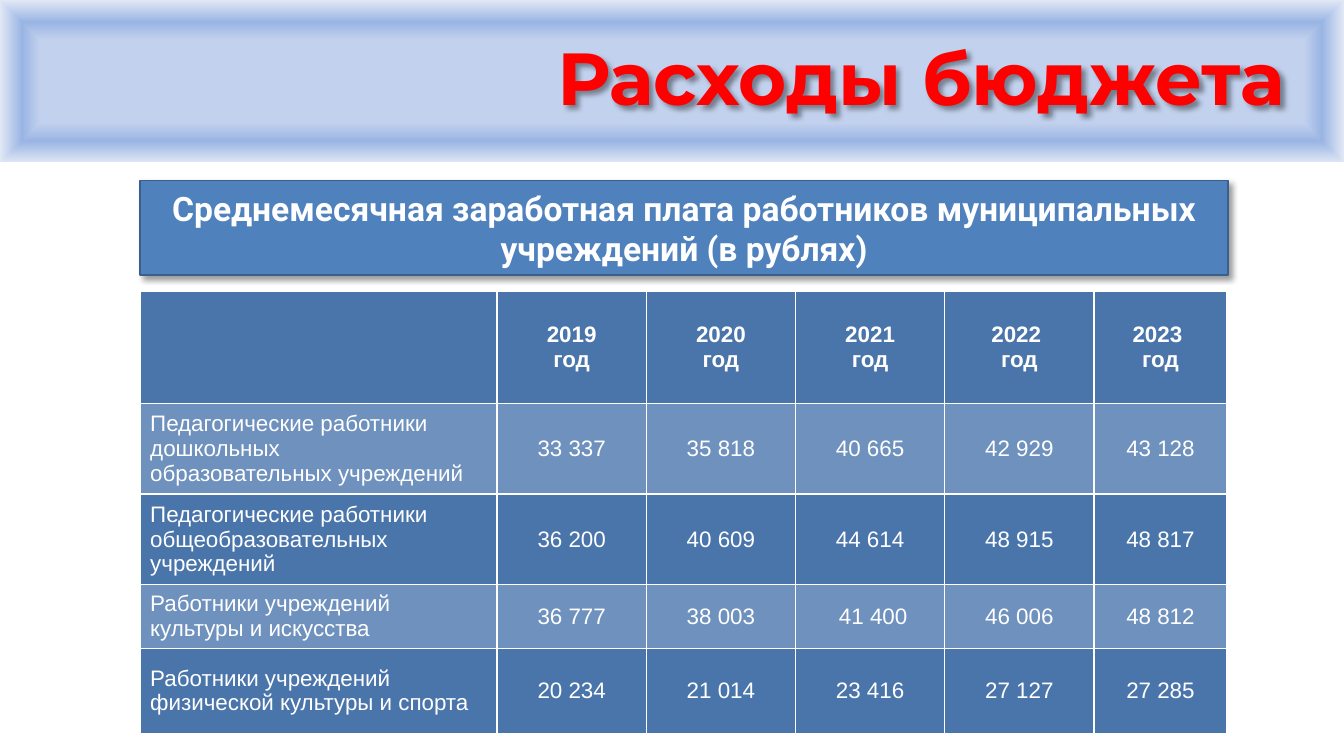
from pptx import Presentation
from pptx.dml.color import RGBColor
from pptx.enum.shapes import MSO_CONNECTOR, MSO_SHAPE
from pptx.enum.text import MSO_ANCHOR, PP_ALIGN
from pptx.oxml import parse_xml
from pptx.oxml.ns import nsdecls
from pptx.util import Inches, Pt

WHITE = RGBColor(0xFF, 0xFF, 0xFF)
RED = RGBColor(0xFF, 0x00, 0x00)
BANNER_BLUE = RGBColor(0x4F, 0x81, 0xBD)
BANNER_EDGE = RGBColor(0x3A, 0x5F, 0x8C)
ROW_DARK = RGBColor(0x4A, 0x75, 0xAB)
ROW_LIGHT = RGBColor(0x6E, 0x91, 0xBD)
HEADER_CENTRE = RGBColor(0xC2, 0xD1, 0xED)
HEADER_MIDDLE = RGBColor(0x9A, 0xB5, 0xE4)
HEADER_EDGE = RGBColor(0xE1, 0xE8, 0xF5)

SLIDE_W, SLIDE_H = 13.33, 7.5
COLUMN_WIDTHS = [3.54, 1.48, 1.48, 1.48, 1.48, 1.32]
ROW_HEIGHTS = [1.11, 0.84, 0.84, 0.59, 0.84]
HEADINGS = [[], ["2019", "год"], ["2020", "год"], ["2021", "год"],
            ["2022 ", "год"], ["2023 ", "год"]]
SALARIES = [
    (["Педагогические работники дошкольных", "образовательных учреждений"],
     ["33 337", "35 818", "40 665", "42 929", "43 128"]),
    (["Педагогические работники общеобразовательных", "учреждений"],
     ["36 200", "40 609", "44 614", "48 915", "48 817"]),
    (["Работники учреждений культуры и искусства"],
     ["36 777", "38 003", " 41 400", "46 006", "48 812"]),
    (["Работники учреждений физической культуры и спорта"],
     ["20 234", "21 014", "23 416", "27 127", "27 285"]),
]


def add_xml(parent, xml):
    tag, rest = xml.split(" ", 1) if " " in xml.split(">")[0] else (xml[:-2], "/>")
    parent.append(parse_xml(f"{tag} {nsdecls('a')} {rest}"))


def add_shadow(sp):
    add_xml(sp._element.spPr,
            '<a:effectLst ><a:outerShdw blurRad="50800" dist="38100" dir="2700000" '
            'algn="tl" rotWithShape="0"><a:srgbClr val="000000"><a:alpha val="40000"/>'
            '</a:srgbClr></a:outerShdw></a:effectLst>')


def write(tf, lines, font, size, color, bold, align):
    for i, line in enumerate(lines):
        p = tf.paragraphs[0] if i == 0 else tf.add_paragraph()
        p.alignment = align
        r = p.add_run()
        r.text = line
        r.font.name = font
        r.font.size = Pt(size)
        r.font.bold = bold
        r.font.color.rgb = color


def add_header(s, x, y, w, h):
    sp = s.shapes.add_shape(MSO_SHAPE.RECTANGLE, Inches(x), Inches(y), Inches(w), Inches(h))
    sp.line.fill.background()
    stops = [(50, HEADER_CENTRE), (73, HEADER_MIDDLE), (100, HEADER_EDGE)]
    stop_xml = "".join(f'<a:gs pos="{pos * 1000}"><a:srgbClr val="{color}"/></a:gs>'
                       for pos, color in stops)
    gradient = parse_xml(
        f'<a:gradFill {nsdecls("a")} rotWithShape="1"><a:gsLst>{stop_xml}</a:gsLst>'
        '<a:path path="shape"><a:fillToRect l="50000" t="50000" r="50000" b="50000"/>'
        '</a:path></a:gradFill>')
    sp._element.spPr.prstGeom.addnext(gradient)
    sp.shadow.inherit = False

    rule = s.shapes.add_connector(MSO_CONNECTOR.STRAIGHT, Inches(x), Inches(y + h),
                                  Inches(x + w), Inches(y + h))
    rule.line.color.rgb = WHITE
    rule.line.width = Pt(2)
    add_xml(rule._element.spPr, "<a:effectLst/>")

    title = s.shapes.add_textbox(Inches(x + 2.65), Inches(y + 0.16), Inches(10.19), Inches(1.09))
    tf = title.text_frame
    tf.word_wrap = True
    tf.vertical_anchor = MSO_ANCHOR.BOTTOM
    write(tf, ["Расходы бюджета"], "Montserrat", 52.6, RED, True, PP_ALIGN.RIGHT)
    tf.paragraphs[0].line_spacing = 0.9
    add_shadow(title)


def add_banner(s, x, y, w, h):
    sp = s.shapes.add_shape(MSO_SHAPE.RECTANGLE, Inches(x), Inches(y), Inches(w), Inches(h))
    sp.fill.solid()
    sp.fill.fore_color.rgb = BANNER_BLUE
    sp.line.color.rgb = BANNER_EDGE
    sp.line.width = Pt(1)
    add_shadow(sp)
    tf = sp.text_frame
    tf.word_wrap = True
    tf.vertical_anchor = MSO_ANCHOR.MIDDLE
    write(tf, ["Среднемесячная заработная плата работников муниципальных учреждений (в рублях)"],
          "Roboto", 24, WHITE, True, PP_ALIGN.CENTER)


def format_cell(cell, color):
    cell.vertical_anchor = MSO_ANCHOR.MIDDLE
    for side in "LRTB":
        add_xml(cell._tc.get_or_add_tcPr(),
                f'<a:ln{side} w="12700"><a:solidFill><a:srgbClr val="{WHITE}"/>'
                f'</a:solidFill></a:ln{side}>')
    cell.fill.solid()
    cell.fill.fore_color.rgb = color


def add_salary_table(s, x, y, w, h):
    rows = [HEADINGS] + [[label] + [[value] for value in values] for label, values in SALARIES]
    table = s.shapes.add_table(len(rows), len(COLUMN_WIDTHS), Inches(x), Inches(y),
                               Inches(w), Inches(h)).table
    for column, width in zip(table.columns, COLUMN_WIDTHS):
        column.width = Inches(width)
    for row, height in zip(table.rows, ROW_HEIGHTS):
        row.height = Inches(height)
    for i, row in enumerate(rows):
        for j, lines in enumerate(row):
            cell = table.cell(i, j)
            format_cell(cell, ROW_LIGHT if i % 2 else ROW_DARK)
            align = PP_ALIGN.CENTER if j else PP_ALIGN.LEFT
            write(cell.text_frame, lines, "Arial", 16, WHITE, i == 0, align)


def main():
    prs = Presentation()
    prs.slide_width = Inches(SLIDE_W)
    prs.slide_height = Inches(SLIDE_H)
    s = prs.slides.add_slide(prs.slide_layouts[6])
    add_header(s, 0, 0, SLIDE_W, 1.62)
    add_banner(s, 1.39, 1.79, 10.79, 0.94)
    add_salary_table(s, 1.39, 2.89, sum(COLUMN_WIDTHS), sum(ROW_HEIGHTS))
    prs.save("out.pptx")


if __name__ == "__main__":
    main()
